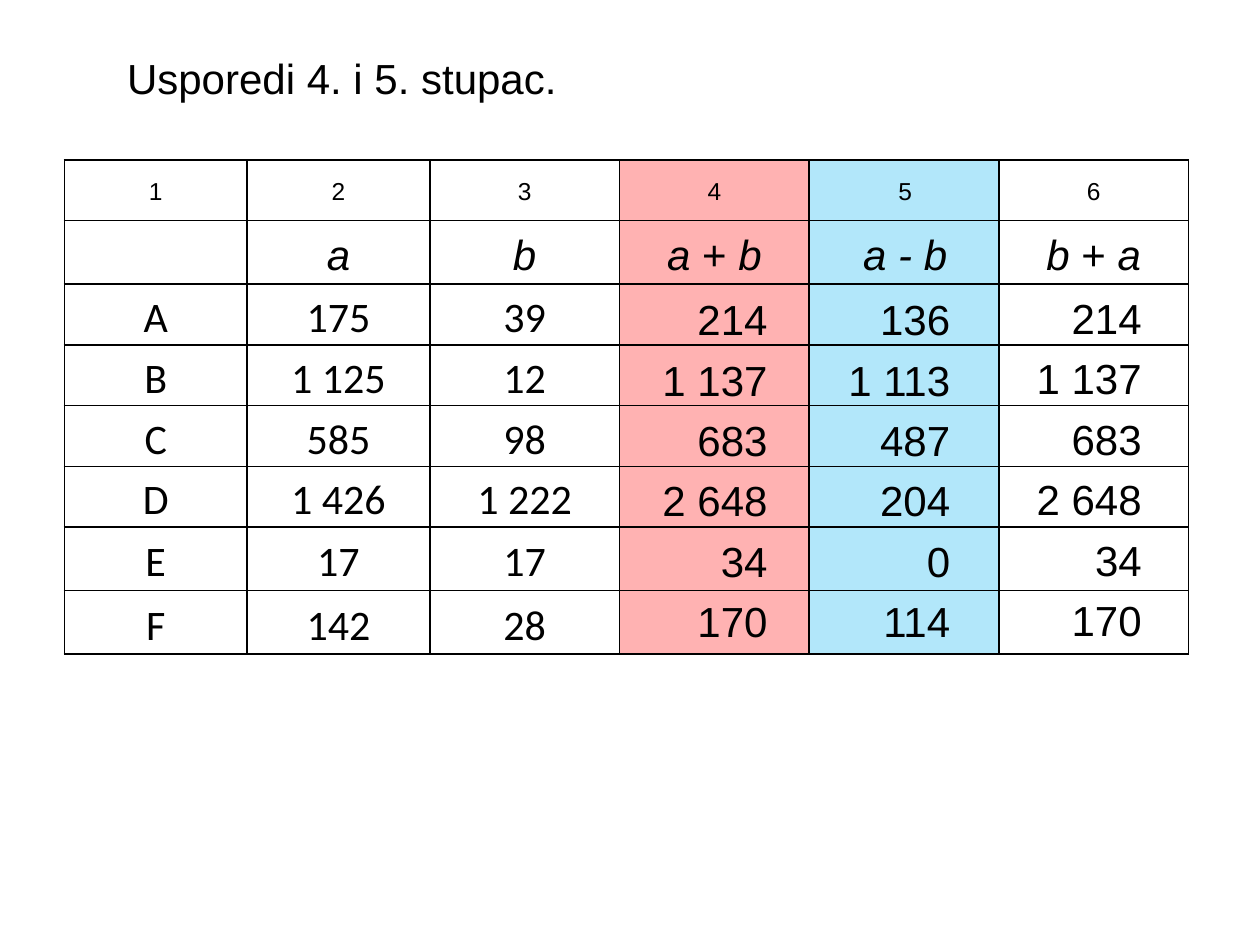
import pptx
import pptx.dml.color
import pptx.enum.text
import pptx.oxml
import pptx.oxml.ns
import pptx.util

Pt = pptx.util.Pt
RGBColor = pptx.dml.color.RGBColor
PP_ALIGN = pptx.enum.text.PP_ALIGN
MSO_ANCHOR = pptx.enum.text.MSO_ANCHOR

BLACK = RGBColor(0x00, 0x00, 0x00)
RED = RGBColor(0xFF, 0x00, 0x00)
BLUE = RGBColor(0x00, 0xB0, 0xF0)

COL_WIDTHS = [104.4] * 2 + [108.4] * 4
ROW_HEIGHTS = [34.7, 36.3] + [34.7] * 4 + [36.3] * 2
COLUMN_FILLS = {3: RED, 4: BLUE}
HEADINGS = ["", "a", "b", "a + b", "a - b", "b + a"]
NUMBERS = [
    ["A", "175", "39"],
    ["B", "1 125", "12"],
    ["C", "585", "98"],
    ["D", "1 426", "1 222"],
    ["E", "17", "17"],
    ["F", "142", "28"],
]
SUMS = ["214", "1 137", "683", "2 648", "34", "170"]
DIFFERENCES = ["136", "1 113", "487", "204", "0", "114"]
RESULT_STEP = 34.56


class Deck:
    font = "Arial"
    size = 24

    def __init__(self, width, height):
        self.prs = pptx.Presentation()
        self.prs.slide_width, self.prs.slide_height = Pt(width), Pt(height)
        self.s = self.prs.slides.add_slide(self.prs.slide_layouts[6])

    def style(self, p, size=None, name=None, italic=None):
        p.font.size = Pt(size or self.size)
        p.font.name = name or self.font
        p.font.color.rgb = BLACK
        p.font.italic = italic

    def text(self, x, y, w, text, align=PP_ALIGN.LEFT):
        tf = self.s.shapes.add_textbox(Pt(x), Pt(y), Pt(w), Pt(36)).text_frame
        tf.word_wrap = True
        tf.auto_size = pptx.enum.text.MSO_AUTO_SIZE.SHAPE_TO_FIT_TEXT
        p = tf.paragraphs[0]
        p.text, p.alignment = text, align
        self.style(p)

    def table(self, x, y, widths, heights):
        frame = self.s.shapes.add_table(
            len(heights), len(widths), Pt(x), Pt(y), Pt(sum(widths)), Pt(sum(heights)))
        table = frame.table
        table.first_row = table.horz_banding = False
        for column, width in zip(table.columns, widths):
            column.width = Pt(width)
        for row, height in zip(table.rows, heights):
            row.height = Pt(height)
            for i, cell in enumerate(row.cells):
                self.cell_look(cell, COLUMN_FILLS.get(i))
        return table

    def cell_look(self, cell, color):
        """Fill the cell at 30 % opacity, or leave it clear, and draw its borders."""
        tc_pr = cell._tc.get_or_add_tcPr()
        if color is None:
            cell.fill.background()
        else:
            cell.fill.solid()
            cell.fill.fore_color.rgb = color
            rgb = tc_pr.find(".//" + pptx.oxml.ns.qn("a:srgbClr"))
            rgb.append(pptx.oxml.parse_xml(
                f'<a:alpha {pptx.oxml.ns.nsdecls("a")} val="30000"/>'))
        for i, side in enumerate("LRTB"):
            tc_pr.insert(i, pptx.oxml.parse_xml(
                f'<a:ln{side} {pptx.oxml.ns.nsdecls("a")} w="{Pt(1)}"><a:solidFill>'
                f'<a:srgbClr val="{BLACK}"/></a:solidFill></a:ln{side}>'))

    def cell_text(self, cell, text, size=None, name=None, italic=None, hanging=False):
        cell.vertical_anchor = MSO_ANCHOR.MIDDLE
        cell.margin_left = cell.margin_right = Pt(5)
        cell.margin_top = cell.margin_bottom = 0
        p = cell.text_frame.paragraphs[0]
        p.alignment, p.line_spacing = PP_ALIGN.CENTER, 1.15
        if hanging:
            p_pr = p._p.get_or_add_pPr()
            p_pr.set("marL", str(Pt(18)))
            p_pr.set("indent", str(Pt(-16.6)))
        first, plus, last = text.partition(" + ")
        if plus:
            for part in (first, plus, last):
                r = p.add_run()
                r.text, r.font.italic = part, part != plus
            italic = None
        else:
            p.text = text
        self.style(p, size, name, italic)


def main():
    deck = Deck(720, 540)
    table = deck.table(36.8, 91.4, COL_WIDTHS, ROW_HEIGHTS)
    for col, heading in enumerate(HEADINGS):
        hanging = col == 4
        deck.cell_text(table.cell(0, col), str(col + 1), size=14, hanging=hanging)
        if heading:
            deck.cell_text(table.cell(1, col), heading, italic=True, hanging=hanging)
    for row, values in enumerate(NUMBERS, start=2):
        for col, value in enumerate(values):
            deck.cell_text(table.cell(row, col), value, name="Calibri")

    for x, top, width, results in [
        (366.5, 164.2, 79.2, SUMS),
        (468, 164.2, 82.1, DIFFERENCES),
        (580.3, 163.4, 79.2, SUMS),
    ]:
        for i, result in enumerate(results):
            deck.text(x, top + i * RESULT_STEP, width, result, PP_ALIGN.RIGHT)
    deck.text(65.5, 26.6, 274.3, "Usporedi 4. i 5. stupac.")
    deck.prs.save("out.pptx")


if __name__ == "__main__":
    main()
